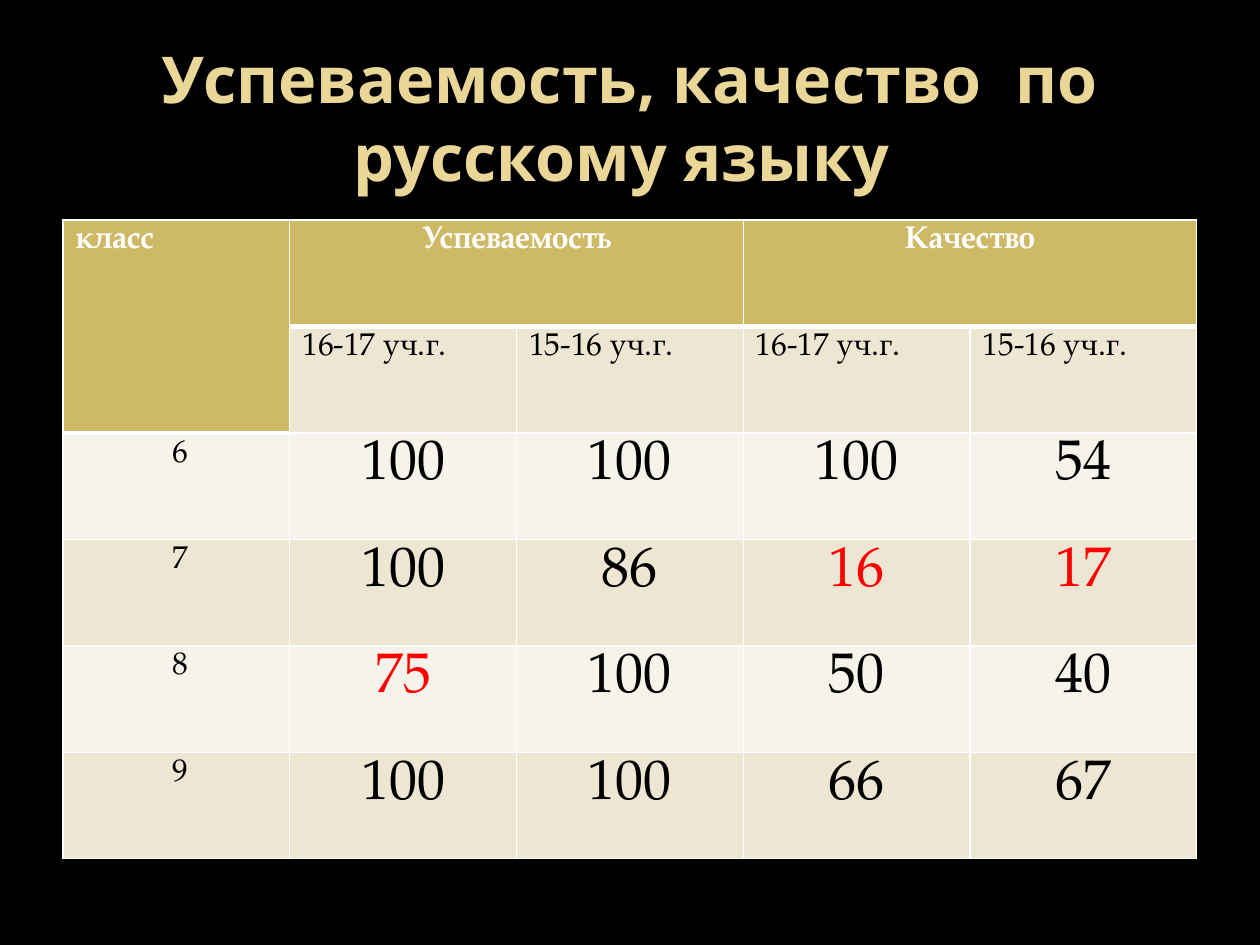
from lxml import etree
from pptx import Presentation
from pptx.dml.color import RGBColor
from pptx.enum.text import MSO_ANCHOR, PP_ALIGN
from pptx.oxml.ns import qn
from pptx.util import Emu, Pt

MIDDLE = MSO_ANCHOR.MIDDLE
LEFT, CENTER = PP_ALIGN.LEFT, PP_ALIGN.CENTER

# Content
TITLE = "Успеваемость, качество  по русскому языку "
ROWS = [
    ["класс", "Успеваемость", "", "Качество", ""],
    ["", "16-17 уч.г.", "15-16 уч.г.", "16-17 уч.г.", "15-16 уч.г."],
    [" 6", "100", "100", "100", "54"],
    [" 7", "100", "86", "16", "17"],
    [" 8", "75", "100", "50", "40"],
    [" 9", "100", "100", "66", "67"],
]
MERGES = [((0, 0), (1, 0)), ((0, 1), (0, 2)), ((0, 3), (0, 4))]
LOW_RESULTS = {(3, 3), (3, 4), (4, 1)}

# Style
COLORS = {
    "background": "000000", "title": "EAD696", "header": "CEB966",
    "odd": "EDE6D3", "even": "F6F3EA", "line": "FFFFFF",
    "header_text": "FFFFFF", "text": "000000", "low": "FF0000",
}
TITLE_FONT, TABLE_FONT = "Noto Sans", "TeX Gyre Pagella"
PX = 914400 // 126


def px(*lengths):
    return [Emu(length * PX) for length in lengths]


def color(name):
    return RGBColor.from_string(COLORS[name])


def format_text(paragraph, font_name, size, color_name, bold, alignment):
    paragraph.alignment = alignment
    for run in paragraph.runs:
        run.font.name = font_name
        run.font.size = Pt(size)
        run.font.bold = bold
        run.font.color.rgb = color(color_name)


def is_header(row, column):
    return row == 0 or (row == 1 and column == 0)


def add_borders(cell, row, column):
    widths = {
        "L": 1, "R": 1,
        "T": 3 if row > 0 and is_header(row - 1, column) else 1,
        "B": 3 if is_header(row, column) else 1,
    }
    properties = cell._tc.get_or_add_tcPr()
    for side, width in widths.items():
        line = etree.SubElement(properties, qn(f"a:ln{side}"), w=str(Pt(width)))
        fill = etree.SubElement(line, qn("a:solidFill"))
        etree.SubElement(fill, qn("a:srgbClr"), val=COLORS["line"])


def format_cell(cell, row, column):
    header = is_header(row, column)
    add_borders(cell, row, column)
    cell.fill.solid()
    band = "odd" if row % 2 else "even"
    cell.fill.fore_color.rgb = color("header" if header else band)

    size = 32 if row > 1 and column > 0 else 18
    text_color = "low" if (row, column) in LOW_RESULTS else "text"
    left = row == 1 or (row, column) == (0, 0)
    format_text(cell.text_frame.paragraphs[0], TABLE_FONT, size,
                "header_text" if header else text_color, header,
                LEFT if left else CENTER)


def main():
    presentation = Presentation()
    presentation.slide_width, presentation.slide_height = px(1260, 945)
    slide = presentation.slides.add_slide(presentation.slide_layouts[6])
    slide.background.fill.solid()
    slide.background.fill.fore_color.rgb = color("background")

    # Title
    title_frame = slide.shapes.add_textbox(*px(63, 38, 1134, 157)).text_frame
    title_frame.word_wrap = True
    title_frame.vertical_anchor = MIDDLE
    title_frame.text = TITLE
    format_text(title_frame.paragraphs[0], TITLE_FONT, 36.9, "title", True, CENTER)

    # Results table
    table = slide.shapes.add_table(len(ROWS), len(ROWS[0]),
                                   *px(63, 220, 1134, 639)).table
    for row, texts in enumerate(ROWS):
        for column, text in enumerate(texts):
            cell = table.cell(row, column)
            cell.text = text
            format_cell(cell, row, column)
    for first, last in MERGES:
        table.cell(*first).merge(table.cell(*last))

    presentation.save("out.pptx")


if __name__ == "__main__":
    main()
